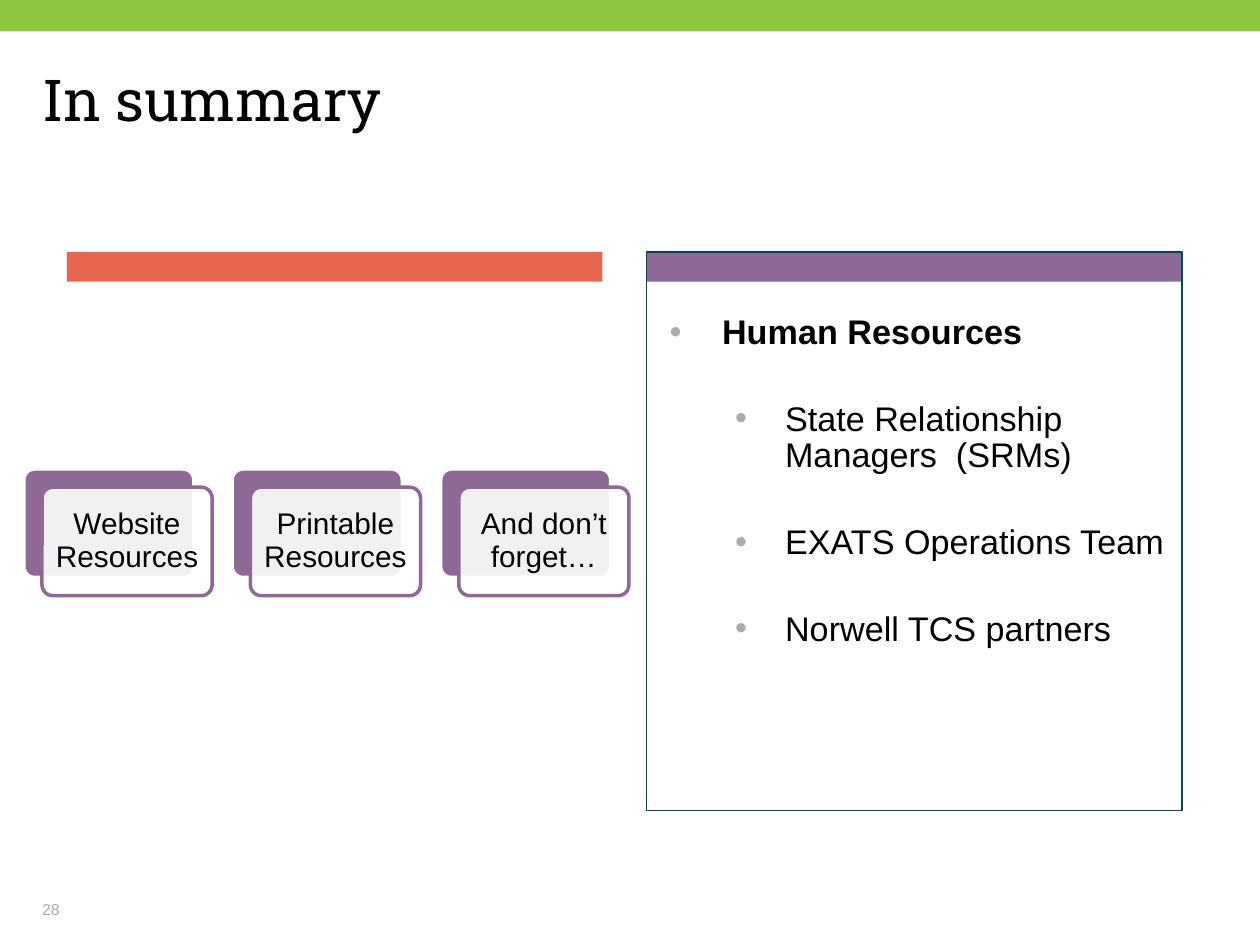
from dataclasses import dataclass

import pptx
import pptx.dml.color
import pptx.enum.shapes
import pptx.enum.text
import pptx.oxml
import pptx.oxml.ns
import pptx.util
from lxml import etree

Pt = pptx.util.Pt
Shape = pptx.enum.shapes.MSO_SHAPE
Anchor = pptx.enum.text.MSO_ANCHOR
Align = pptx.enum.text.PP_ALIGN
qn = pptx.oxml.ns.qn

COLORS = {
    "green": "8DC63F",
    "coral": "E86650",
    "purple": "8E6996",
    "navy": "00495D",
    "grey": "AEABAB",
    "white": "FFFFFF",
    "black": "000000",
}


@dataclass
class Box:
    left: float
    top: float
    width: float
    height: float

    def lengths(self) -> tuple:
        return Pt(self.left), Pt(self.top), Pt(self.width), Pt(self.height)


@dataclass
class Bullet:
    text: str
    level: int
    margin: float
    hanging: float
    space_before: float
    bold: bool = False


LEFT_COLUMN, RIGHT_COLUMN, COLUMN_TOP, COLUMN_WIDTH = 38.2, 369.4, 144, 306
BARS = [
    (Box(0, 0, 720, 18), "green"),
    (Box(LEFT_COLUMN, COLUMN_TOP, COLUMN_WIDTH, 17), "coral"),
    (Box(RIGHT_COLUMN, COLUMN_TOP, COLUMN_WIDTH, 17), "purple"),
]
BULLETS = [
    Bullet("Human Resources", 0, 36, 30, 0, bold=True),
    Bullet("State Relationship Managers  (SRMs)", 1, 72, 28.5, 28.4),
    Bullet("EXATS Operations Team", 1, 72, 28.5, 28.4),
    Bullet("Norwell TCS partners", 1, 72, 28.5, 28.4),
]
CARDS = ["Website Resources", "Printable Resources", "And don’t forget…"]
CARD_LEFT, CARD_TOP, CARD_PITCH = 13.6, 268, 119.1
CARD_WIDTH, CARD_HEIGHT, CARD_OFFSET = 97.2, 62, 10.4


def rgb(name: str) -> pptx.dml.color.RGBColor:
    return pptx.dml.color.RGBColor.from_string(COLORS[name])


def place(shape, box: Box) -> None:
    shape.left, shape.top, shape.width, shape.height = box.lengths()


def set_frame(shape, insets: tuple, anchor) -> None:
    """Set the insets (left, top, right, bottom) and fixed-size wrapping."""
    frame = shape.text_frame
    frame.margin_left, frame.margin_top, frame.margin_right, frame.margin_bottom = map(Pt, insets)
    frame.vertical_anchor = anchor
    frame.word_wrap = True
    frame.auto_size = pptx.enum.text.MSO_AUTO_SIZE.NONE


def format_runs(paragraph, size: float, color: str = "black", font: str = "Arial", bold: bool = False) -> None:
    for run in paragraph.runs:
        run.font.name = font
        run.font.size = Pt(size)
        run.font.bold = bold
        run.font.color.rgb = rgb(color)


def add_shape(shapes, kind, box: Box, fill: str, line: str | None = None):
    shape = shapes.add_shape(kind, *box.lengths())
    shape.shadow.inherit = False
    shape.fill.solid()
    shape.fill.fore_color.rgb = rgb(fill)
    if line:
        shape.line.color.rgb = rgb(line)
        shape.line.width = Pt(2)
    else:
        shape.line.fill.background()
    return shape


def add_title(slide) -> None:
    title = slide.shapes.title
    place(title, Box(24, 41, 665, 91.5))
    set_frame(title, (0, 0, 0, 0), Anchor.TOP)
    title.text_frame.text = "In summary"
    paragraph = title.text_frame.paragraphs[0]
    paragraph.alignment = Align.LEFT
    paragraph.line_spacing = 0.9
    format_runs(paragraph, 33, font="Roboto Slab")


def add_bullet_mark(paragraph, bullet: Bullet) -> None:
    properties = paragraph._p.get_or_add_pPr()
    properties.set("marL", str(Pt(bullet.margin)))
    properties.set("indent", str(-Pt(bullet.hanging)))
    color = etree.SubElement(properties, qn("a:buClr"))
    etree.SubElement(color, qn("a:srgbClr"), val=COLORS["grey"])
    etree.SubElement(properties, qn("a:buFont"), typeface="Arial")
    etree.SubElement(properties, qn("a:buChar"), char="•")


def fill_body(body) -> None:
    place(body, Box(RIGHT_COLUMN, COLUMN_TOP, COLUMN_WIDTH, 319))
    body.line.color.rgb = rgb("navy")
    body.line.width = Pt(0.75)
    set_frame(body, (7.2, 36, 7.2, 3.6), Anchor.TOP)
    body.text_frame.text = "\n".join(bullet.text for bullet in BULLETS)
    for paragraph, bullet in zip(body.text_frame.paragraphs, BULLETS):
        paragraph.level = bullet.level
        add_bullet_mark(paragraph, bullet)
        paragraph.line_spacing = 0.9
        paragraph.space_before = Pt(bullet.space_before)
        format_runs(paragraph, 19.5, bold=bullet.bold)


def add_card(slide, text: str, left: float) -> None:
    """Draw a purple card with a translucent label card overlapping it."""
    group = slide.shapes.add_group_shape()
    back_box = Box(left, CARD_TOP, CARD_WIDTH, CARD_HEIGHT)
    front_box = Box(left + CARD_OFFSET, CARD_TOP + CARD_OFFSET, CARD_WIDTH, CARD_HEIGHT)
    back = add_shape(group.shapes, Shape.ROUNDED_RECTANGLE, back_box, "purple", "white")
    front = add_shape(group.shapes, Shape.ROUNDED_RECTANGLE, front_box, "white", "purple")
    back.adjustments[0] = front.adjustments[0] = 0.1
    fill_color = front.element.spPr.find(qn("a:solidFill")).find(qn("a:srgbClr"))
    etree.SubElement(fill_color, qn("a:alpha"), val="90000")

    set_frame(front, (5, 5, 5, 5), Anchor.MIDDLE)
    front.text_frame.text = text
    paragraph = front.text_frame.paragraphs[0]
    paragraph.alignment = Align.CENTER
    paragraph.line_spacing = 0.9
    format_runs(paragraph, 17)


def add_page_number(slide) -> None:
    number = slide.shapes.add_textbox(*Box(24, 507.6, 162, 17.3).lengths())
    set_frame(number, (0, 0, 0, 0), Anchor.BOTTOM)
    number.text_frame.text = "28"
    paragraph = number.text_frame.paragraphs[0]
    paragraph.space_after = Pt(6)
    format_runs(paragraph, 9, "grey")


def main() -> None:
    presentation = pptx.Presentation()
    presentation.slide_width, presentation.slide_height = Pt(720), Pt(540)
    slide = presentation.slides.add_slide(presentation.slide_layouts[1])
    bars = [add_shape(slide.shapes, Shape.RECTANGLE, box, color) for box, color in BARS]
    add_title(slide)
    body = slide.placeholders[1]
    fill_body(body)
    bars[-1].element.addnext(body.element)  # the outline lies over the bar
    add_page_number(slide)
    for index, text in enumerate(CARDS):
        add_card(slide, text, CARD_LEFT + index * CARD_PITCH)
    presentation.save("out.pptx")


if __name__ == "__main__":
    main()
